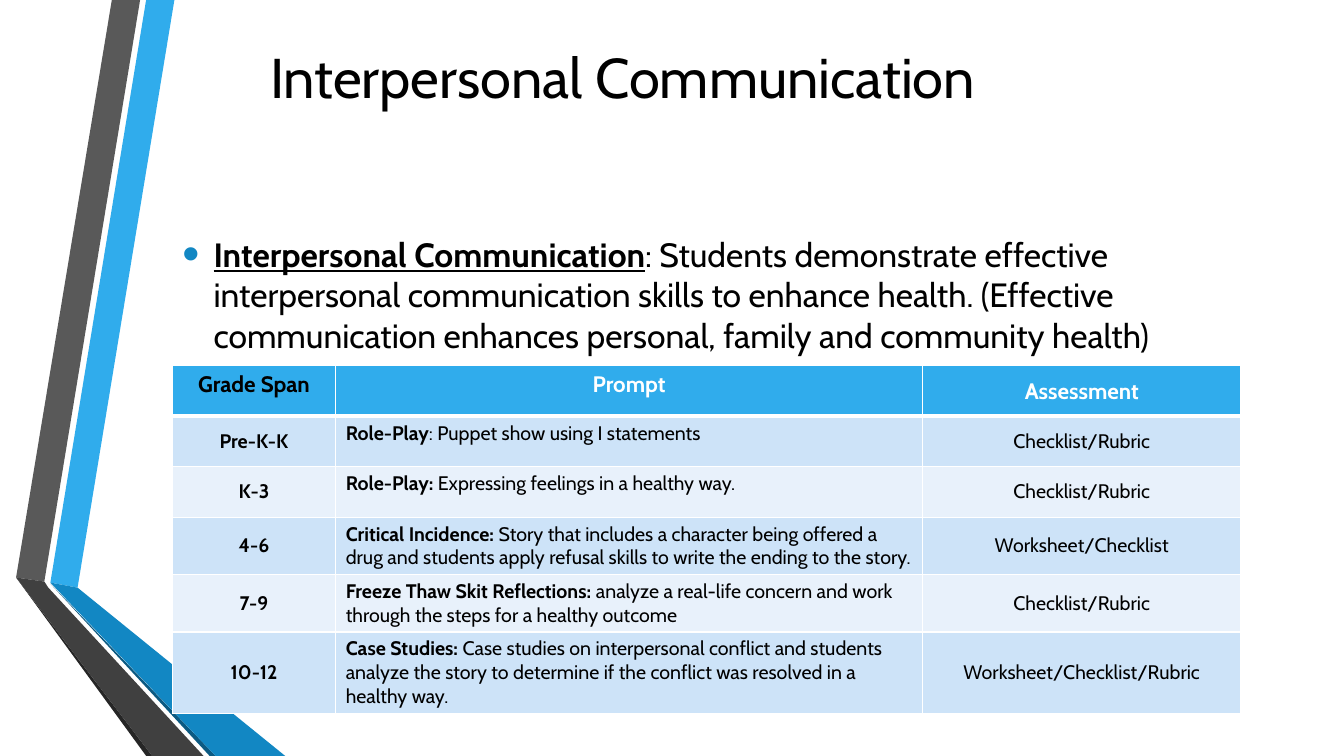
from lxml import etree
from pptx import Presentation, util as u
from pptx.dml.color import RGBColor
from pptx.enum import text as t
from pptx.oxml import ns

FONT = "Cabin"
BLACK, WHITE, SKY, BLUE = "000000", "FFFFFF", "30ACEC", "1287C3"
BANDS = ["CDE3F8", "E8F1FB"]

TITLE = "Interpersonal Communication"
STANDARD = [
    ("Interpersonal Communication", True),
    (": Students demonstrate effective interpersonal communication skills to enhance health. "
     "(Effective communication enhances personal, family and community health)", False),
]
HEADERS = ["Grade Span", "Prompt", "Assessment"]
ROWS = [  # grade span, activity, description, assessment
    ("Pre-K-K", "Role-Play", ": Puppet show using I statements", "Checklist/Rubric"),
    ("K-3", "Role-Play: ", "Expressing feelings in a healthy way.", "Checklist/Rubric"),
    ("4-6", "Critical Incidence: ",
     "Story that includes a character being offered a drug and students apply refusal skills "
     "to write the ending to the story.", "Worksheet/Checklist"),
    ("7-9", "Freeze Thaw Skit Reflections: ",
     "analyze a real-life concern and work through the steps for a healthy outcome",
     "Checklist/Rubric"),
    ("10-12", "Case Studies: ",
     "Case studies on interpersonal conflict and students analyze the story to determine "
     "if the conflict was resolved in a healthy way.", "Worksheet/Checklist/Rubric"),
]
COLUMN_WIDTHS = [1.62, 5.82, 3.16]
ROW_HEIGHTS = [0.5, 0.5, 0.5, 0.57, 0.57, 0.81]
LEFT, TABLE_TOP = 1.71, 3.63

RIBBONS = [  # colour, corner points
    (SKY, [(0.5, 5.78), (0.77, 5.83), (1.73, 0), (1.45, 0)]),
    ("595959", [(1.39, 0), (1.11, 0), (0.16, 5.73), (0.44, 5.77)]),
    ("262626", [(0.16, 5.73), (1.45, 7.5), (1.51, 7.5)]),
    ("0C5A82", [(0.5, 5.79), (2.08, 7.5), (2.14, 7.5)]),
    (BLUE, [(0.5, 5.78), (2.14, 7.5), (2.83, 7.5), (0.77, 5.83)]),
    ("404040", [(2.02, 7.5), (0.48, 5.83), (0.44, 5.77), (0.16, 5.73), (1.51, 7.5)]),
]


def color(value):
    return RGBColor.from_string(value)


def set_font(font, size, fill=BLACK, bold=None):
    font.name, font.size, font.bold = FONT, u.Pt(size), bold
    font.color.rgb = color(fill)


def add_text_box(slide, left, top, width, height, anchor):
    frame = slide.shapes.add_textbox(*map(u.Inches, (left, top, width, height))).text_frame
    frame.word_wrap, frame.vertical_anchor = True, anchor
    return frame


def add_bullet(paragraph, indent, fill, percent):
    properties = paragraph._p.get_or_add_pPr()
    properties.set("marL", str(u.Inches(indent)))
    properties.set("indent", str(-u.Inches(indent)))
    bullet_color = etree.SubElement(properties, ns.qn("a:buClr"))
    etree.SubElement(bullet_color, ns.qn("a:srgbClr"), val=fill)
    etree.SubElement(properties, ns.qn("a:buSzPct"), val=str(percent * 1000))
    etree.SubElement(properties, ns.qn("a:buFont"), typeface="Arial")
    etree.SubElement(properties, ns.qn("a:buChar"), char="•")


def set_borders(cell, top, bottom):
    properties = cell._tc.get_or_add_tcPr()
    widths = {"a:lnL": 1, "a:lnR": 1, "a:lnT": top, "a:lnB": bottom}
    for position, (tag, width) in enumerate(widths.items()):
        line = etree.Element(ns.qn(tag), w=str(u.Pt(width)))
        fill = etree.SubElement(line, ns.qn("a:solidFill"))
        etree.SubElement(fill, ns.qn("a:srgbClr"), val=WHITE)
        properties.insert(position, line)


def fill_cell(cell, runs, size, fill, font_color, centered, middle):
    """Write (text, bold) runs into a cell."""
    cell.fill.solid()
    cell.fill.fore_color.rgb = color(fill)
    cell.vertical_anchor = t.MSO_ANCHOR.MIDDLE if middle else t.MSO_ANCHOR.TOP
    paragraph = cell.text_frame.paragraphs[0]
    paragraph.alignment = t.PP_ALIGN.CENTER if centered else t.PP_ALIGN.LEFT
    for words, bold in runs:
        run = paragraph.add_run()
        run.text = words
        set_font(run.font, size, font_color, bold)


presentation = Presentation()
presentation.slide_width, presentation.slide_height = u.Inches(13.33), u.Inches(7.5)
slide = presentation.slides.add_slide(presentation.slide_layouts[6])

# Folded ribbons on the left
for fill, points in RIBBONS:
    corners = [(u.Inches(x), u.Inches(y)) for x, y in points]
    builder = slide.shapes.build_freeform(*corners[0])
    builder.add_line_segments(corners[1:], close=True)
    ribbon = builder.convert_to_shape()
    ribbon.shadow.inherit = False
    ribbon.fill.solid()
    ribbon.fill.fore_color.rgb = color(fill)
    ribbon.line.fill.background()

# Title
frame = add_text_box(slide, LEFT, 0.24, 8.93, 1.02, t.MSO_ANCHOR.MIDDLE)
paragraph = frame.paragraphs[0]
paragraph.text, paragraph.alignment = TITLE, t.PP_ALIGN.CENTER
set_font(paragraph.font, 40)

# Standard, as one bullet
frame = add_text_box(slide, LEFT, 2.27, 11.06, 1.31, t.MSO_ANCHOR.TOP)
paragraph = frame.paragraphs[0]
add_bullet(paragraph, 0.31, BLUE, 145)
for words, emphasized in STANDARD:
    run = paragraph.add_run()
    run.text = words
    set_font(run.font, 24, bold=emphasized)
    run.font.underline = emphasized

# Table of prompts by grade span
table = slide.shapes.add_table(
    len(ROW_HEIGHTS), len(COLUMN_WIDTHS), u.Inches(LEFT), u.Inches(TABLE_TOP),
    u.Inches(sum(COLUMN_WIDTHS)), u.Inches(sum(ROW_HEIGHTS))).table
for column, width in zip(table.columns, COLUMN_WIDTHS):
    column.width = u.Inches(width)
for row, height in zip(table.rows, ROW_HEIGHTS):
    row.height = u.Inches(height)

for column, header in enumerate(HEADERS):
    fill_cell(table.cell(0, column), [(header, True)], 16, SKY,
              BLACK if column == 0 else WHITE, centered=True, middle=column == 2)
for row, (span, activity, description, assessment) in enumerate(ROWS, 1):
    contents = [[(span, True)], [(activity, True), (description, False)], [(assessment, False)]]
    for column, runs in enumerate(contents):
        beside = column != 1
        fill_cell(table.cell(row, column), runs, 14, BANDS[(row - 1) % 2], BLACK,
                  centered=beside, middle=beside)
for row in range(len(ROW_HEIGHTS)):
    for column in range(len(COLUMN_WIDTHS)):
        set_borders(table.cell(row, column), 3 if row == 1 else 1, 3 if row == 0 else 1)

presentation.save("out.pptx")
